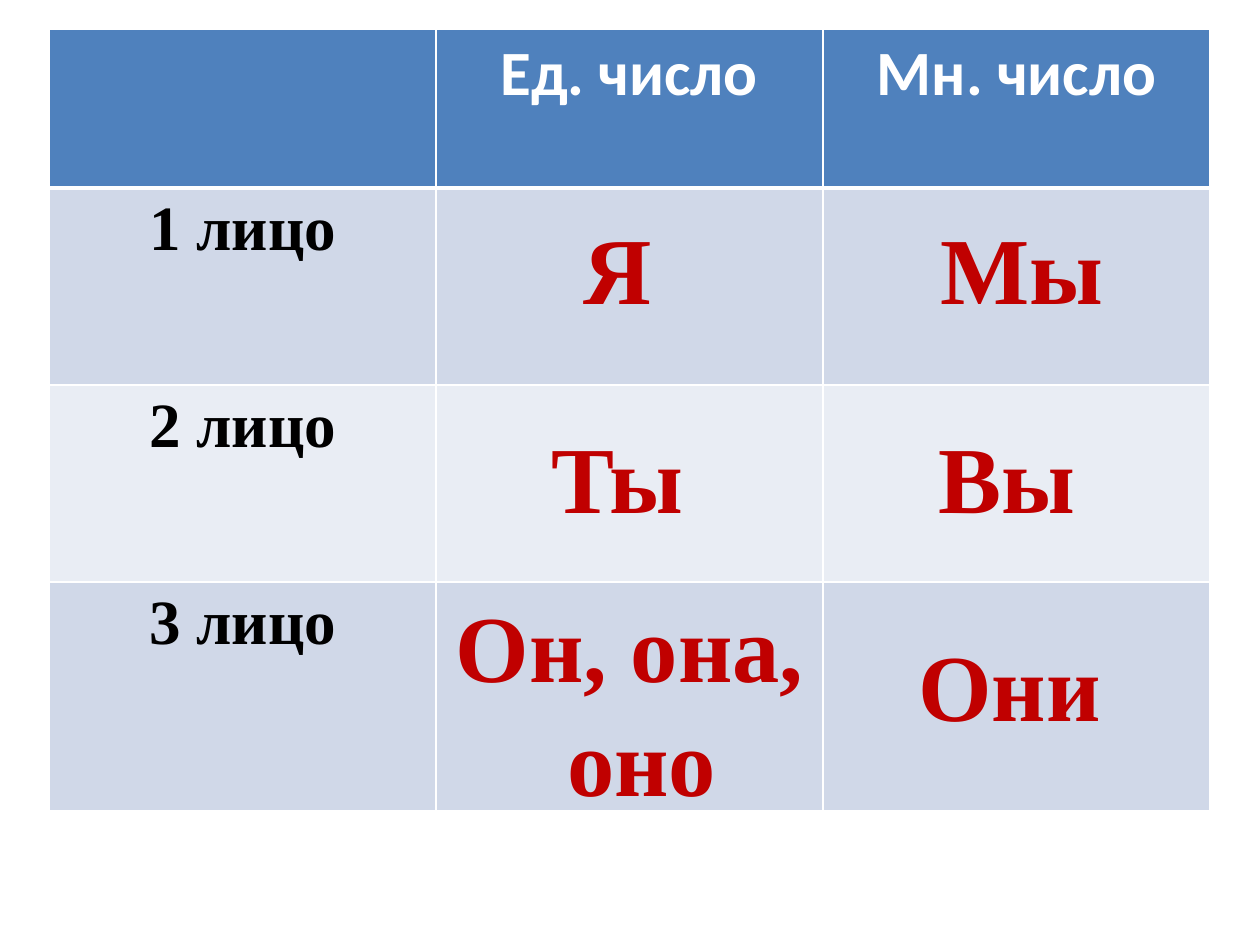
import pptx
import pptx.dml.color
import pptx.enum.text
import pptx.oxml
import pptx.util

EMU_PER_PX = 914400 / 126
WHITE = pptx.dml.color.RGBColor(0xFF, 0xFF, 0xFF)
BLACK = pptx.dml.color.RGBColor(0x00, 0x00, 0x00)
RED = pptx.dml.color.RGBColor(0xC0, 0x00, 0x00)
HEADER_BLUE = pptx.dml.color.RGBColor(0x4F, 0x81, 0xBD)
BAND_DARK = pptx.dml.color.RGBColor(0xD0, 0xD8, 0xE8)
BAND_LIGHT = pptx.dml.color.RGBColor(0xE9, 0xED, 0xF4)
ROW_FILLS = [HEADER_BLUE, BAND_DARK, BAND_LIGHT, BAND_DARK]

HEADING = {"name": "Calibri", "size": pptx.util.Pt(36), "bold": True}
PERSON = {"name": "Times New Roman", "size": pptx.util.Pt(36), "bold": True}
PRONOUN = {"name": "Times New Roman", "size": pptx.util.Pt(54), "bold": True}
DRAWING_NS = "http://schemas.openxmlformats.org/drawingml/2006/main"


def px(*lengths):
    return [pptx.util.Emu(round(length * EMU_PER_PX)) for length in lengths]


def write_centred(frame, lines, font_format, color):
    for index, line in enumerate(lines):
        paragraph = frame.add_paragraph() if index else frame.paragraphs[0]
        paragraph.alignment = pptx.enum.text.PP_ALIGN.CENTER
        run = paragraph.add_run()
        run.text = line
        for attribute, value in font_format.items():
            setattr(run.font, attribute, value)
        run.font.color.rgb = color


deck = pptx.Presentation()
deck.slide_width, deck.slide_height = px(1260, 945)
slide = deck.slides.add_slide(deck.slide_layouts[6])

# Table of persons and numbers
row_heights = [159, 197, 197, 229]
column_width = 387
labels = [
    ["", "Ед. число", "Мн. число"],
    ["1 лицо", "", ""],
    ["2 лицо", "", ""],
    ["3 лицо", "", ""],
]
persons = slide.shapes.add_table(
    4, 3, *px(49, 29, 3 * column_width, sum(row_heights))).table
for column in persons.columns:
    column.width = px(column_width)[0]
for row, height in zip(persons.rows, row_heights):
    row.height = px(height)[0]

for r, row_labels in enumerate(labels):
    for c, label in enumerate(row_labels):
        cell = persons.cell(r, c)
        properties = cell._tc.get_or_add_tcPr()
        for side in "LRTB":
            # The line under the header is thicker
            under_header = (r, side) in [(0, "B"), (1, "T")]
            width = pptx.util.Pt(3 if under_header else 1)
            properties.append(pptx.oxml.parse_xml(
                f'<a:ln{side} xmlns:a="{DRAWING_NS}" w="{width}"><a:solidFill>'
                f'<a:srgbClr val="{WHITE}"/></a:solidFill></a:ln{side}>'))
        cell.fill.solid()
        cell.fill.fore_color.rgb = ROW_FILLS[r]
        if label:
            write_centred(cell.text_frame, [label],
                          PERSON if r else HEADING, BLACK if r else WHITE)

# Pronouns laid over the cells
pronouns = [
    (["Я"], 571, 204, 94, 127),
    (["Мы"], 927, 204, 190, 127),
    (["Ты"], 538, 413, 159, 127),
    (["Вы"], 925, 413, 164, 127),
    (["Он, она, ", "оно"], 441, 582, 401, 242),
    (["Они"], 905, 621, 209, 127),
]
for lines, *place in pronouns:
    frame = slide.shapes.add_textbox(*px(*place)).text_frame
    frame.word_wrap = False
    frame.auto_size = pptx.enum.text.MSO_AUTO_SIZE.SHAPE_TO_FIT_TEXT
    write_centred(frame, lines, PRONOUN, RED)

deck.save("out.pptx")
